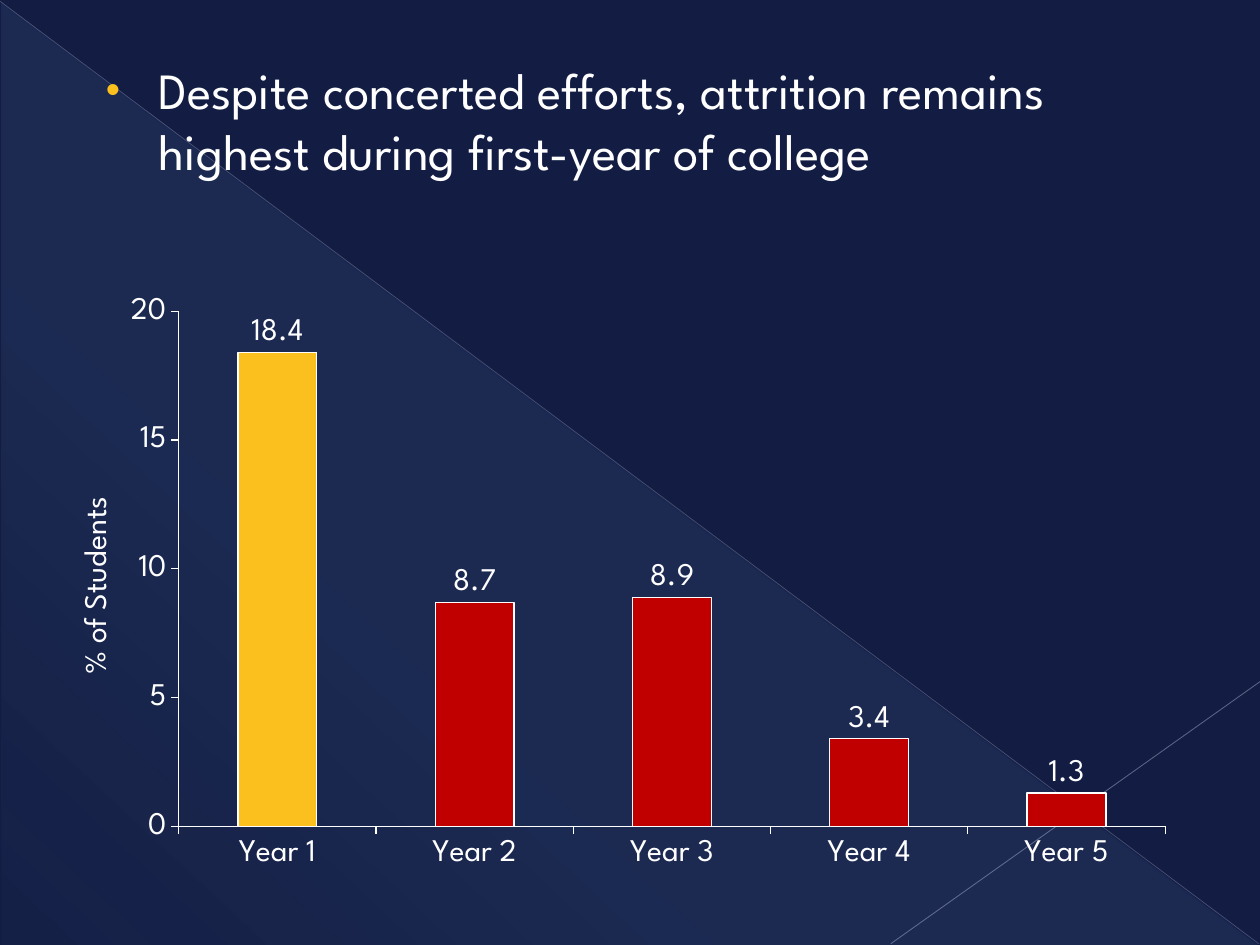
from dataclasses import dataclass

from lxml import etree
from pptx import Presentation
from pptx.chart.data import CategoryChartData
from pptx.dml.color import RGBColor
from pptx.enum.chart import XL_CHART_TYPE, XL_LABEL_POSITION, XL_TICK_MARK
from pptx.enum.shapes import MSO_CONNECTOR, MSO_SHAPE
from pptx.enum.text import MSO_ANCHOR, MSO_AUTO_SIZE
from pptx.oxml import parse_xml
from pptx.oxml.ns import nsdecls, qn
from pptx.util import Inches, Pt

COLUMN = XL_CHART_TYPE.COLUMN_CLUSTERED
OUTSIDE_END = XL_LABEL_POSITION.OUTSIDE_END
TICK_OUT = XL_TICK_MARK.OUTSIDE
TICK_NONE = XL_TICK_MARK.NONE
STRAIGHT = MSO_CONNECTOR.STRAIGHT
RT_TRIANGLE = MSO_SHAPE.RIGHT_TRIANGLE

FONT = "League Spartan"
NAVY, WHITE, GOLD, RED, SKY = "131D43", "FFFFFF", "FBC01E", "C00000", "76B6F2"


@dataclass
class Ray:
    start: tuple[float, float]
    end: tuple[float, float]
    color: str
    width: float
    opacity: int


RAYS = [
    Ray((0, 0.01), (9.99, 7.49), "ACB0D2", 0.39, 35),
    Ray((10, 5.41), (7.07, 7.49), "B5B9D7", 0.47, 45),
]
ATTRITION = {"Year 1": 18.4, "Year 2": 8.7, "Year 3": 8.9, "Year 4": 3.4, "Year 5": 1.3}


def rgb(color: str) -> RGBColor:
    return RGBColor.from_string(color)


def style_font(font, size: float) -> None:
    font.name = FONT
    font.size = Pt(size)
    font.bold = False
    font.color.rgb = rgb(WHITE)


def draw_triangle(s) -> None:
    """Right triangle whose translucent tint fades toward the lower left."""
    sp = s.shapes.add_shape(RT_TRIANGLE, Inches(0.01), Inches(0.02), Inches(9.98), Inches(7.48))
    sp.shadow.inherit = False
    sp.line.fill.background()
    stops = "".join(
        f'<a:gs pos="{pos * 1000}"><a:srgbClr val="{SKY}">'
        f'<a:alpha val="{alpha * 1000}"/></a:srgbClr></a:gs>'
        for pos, alpha in [(0, 10), (70, 8), (100, 1)]
    )
    grad = parse_xml(
        f'<a:gradFill {nsdecls("a")} rotWithShape="1"><a:gsLst>{stops}</a:gsLst>'
        f'<a:lin ang="{133 * 60000}" scaled="0"/></a:gradFill>'
    )
    sp.element.spPr.find(qn("a:prstGeom")).addnext(grad)


def draw_ray(s, ray: Ray) -> None:
    ends = [Inches(v) for v in ray.start + ray.end]
    cxn = s.shapes.add_connector(STRAIGHT, *ends)
    cxn.line.color.rgb = rgb(ray.color)
    cxn.line.width = Pt(ray.width)
    spPr = cxn.element.spPr
    alpha = etree.SubElement(next(spPr.iter(qn("a:srgbClr"))), qn("a:alpha"))
    alpha.set("val", str(ray.opacity * 1000))
    etree.SubElement(spPr, qn("a:effectLst"))


def fill_body(body) -> None:
    body.left, body.top = Inches(0.67), Inches(0.42)
    body.width, body.height = Inches(9), Inches(1.75)
    tf = body.text_frame
    tf.word_wrap = True
    tf.auto_size = MSO_AUTO_SIZE.NONE
    tf.vertical_anchor = MSO_ANCHOR.TOP
    p = tf.paragraphs[0]
    r = p.add_run()
    r.text = "Despite concerted efforts, attrition remains highest during first-year of college"
    style_font(r.font, 29)
    pPr = p._p.get_or_add_pPr()
    pPr.set("marL", str(Inches(0.49)))
    pPr.set("indent", str(Inches(-0.42)))
    for xml in (
        f'<a:spcBef {nsdecls("a")}><a:spcPct val="20000"/></a:spcBef>',
        f'<a:buClr {nsdecls("a")}><a:srgbClr val="{GOLD}"/></a:buClr>',
        f'<a:buSzPct {nsdecls("a")} val="80000"/>',
        f'<a:buFont {nsdecls("a")} typeface="Arial"/>',
        f'<a:buChar {nsdecls("a")} char="•"/>',
    ):
        pPr.append(parse_xml(xml))


def manual_layout(**settings):
    items = "".join(f'<c:{tag} val="{val}"/>' for tag, val in settings.items())
    return parse_xml(
        f'<c:layout {nsdecls("c")}><c:manualLayout>{items}</c:manualLayout></c:layout>'
    )


def style_axis(axis) -> None:
    axis.has_major_gridlines = False
    axis.major_tick_mark = TICK_OUT
    axis.minor_tick_mark = TICK_NONE
    axis.format.line.color.rgb = rgb(WHITE)
    axis.format.line.width = Pt(0.75)
    style_font(axis.tick_labels.font, 18)


def draw_chart(s) -> None:
    data = CategoryChartData()
    data.categories = list(ATTRITION)
    data.add_series("Series 1", list(ATTRITION.values()))
    chart = s.shapes.add_chart(
        COLUMN, Inches(0.5), Inches(2.25), Inches(9), Inches(5), data
    ).chart
    style_font(chart.font, 18)
    chart.has_legend = False
    chart.has_title = False
    plot_area = next(chart.element.iter(qn("c:plotArea")))
    for old in plot_area.findall(qn("c:layout")):
        plot_area.remove(old)
    plot_area.insert(0, manual_layout(
        layoutTarget="inner", xMode="edge", yMode="edge", x=0.102, y=0.044, w=0.87, h=0.818
    ))

    style_axis(chart.category_axis)
    axis = chart.value_axis
    style_axis(axis)
    axis.minimum_scale, axis.maximum_scale, axis.major_unit = 0, 20, 5
    title = axis.axis_title
    r = title.text_frame.paragraphs[0].add_run()
    r.text = "% of Students"
    style_font(r.font, 18)
    for old in title.element.findall(qn("c:layout")):
        title.element.remove(old)
    title.element.find(qn("c:tx")).addnext(
        manual_layout(xMode="edge", yMode="edge", x=0.01, y=0.33)
    )

    plot = chart.plots[0]
    plot.gap_width = 150
    plot.vary_by_categories = False
    series = plot.series[0]
    for i in range(len(ATTRITION)):
        bar = series.points[i].format
        bar.fill.solid()
        bar.fill.fore_color.rgb = rgb(RED if i else GOLD)
        bar.line.color.rgb = rgb(WHITE)
        bar.line.width = Pt(0.75)
    labels = series.data_labels
    labels.show_value = True
    labels.position = OUTSIDE_END
    style_font(labels.font, 18)


def main() -> None:
    prs = Presentation()
    prs.slide_width, prs.slide_height = Inches(10), Inches(7.5)
    s = prs.slides.add_slide(prs.slide_layouts[1])
    s.background.fill.solid()
    s.background.fill.fore_color.rgb = rgb(NAVY)
    title, body = s.placeholders
    title.element.getparent().remove(title.element)

    draw_triangle(s)
    for ray in RAYS:
        draw_ray(s, ray)
    fill_body(body)
    s.shapes.element.append(body.element)  # in front of the backdrop
    draw_chart(s)
    prs.save("out.pptx")


if __name__ == "__main__":
    main()
